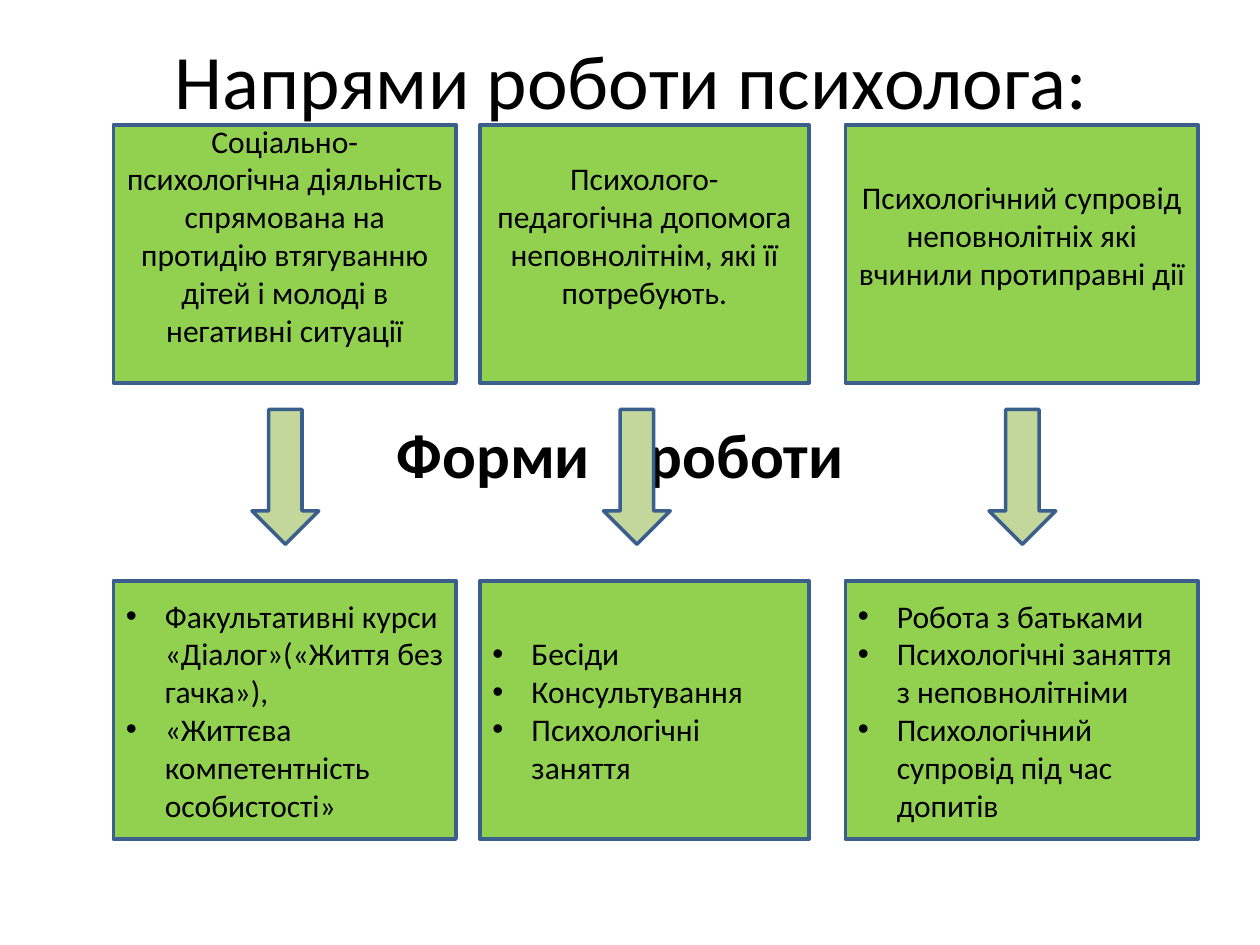
from lxml.etree import SubElement
from pptx import Presentation
from pptx.dml.color import RGBColor
from pptx.enum.shapes import MSO_SHAPE
from pptx.enum.text import MSO_ANCHOR, MSO_AUTO_SIZE, PP_ALIGN
from pptx.oxml.ns import qn
from pptx.util import Inches, Pt

BOX_H = 2.05
DIRECTIONS_Y, ARROWS_Y, FORMS_Y = 0.99, 3.25, 4.61

# left, width, arrow left, direction of work, forms of work
COLUMNS = [
    (0.9, 2.72, 2,
     "Соціально-психологічна діяльність спрямована на протидію втягуванню "
     "дітей і молоді в негативні ситуації",
     ["Факультативні курси «Діалог»(«Життя без гачка»),",
      "«Життєва компетентність особистості»"]),
    (3.81, 2.61, 4.79,
     "Психолого-педагогічна допомога неповнолітнім, які її потребують.",
     ["Бесіди", "Консультування", "Психологічні заняття"]),
    (6.71, 2.8, 7.85,
     "Психологічний супровід неповнолітніх які вчинили протиправні дії",
     ["Робота з батьками", "Психологічні заняття з неповнолітніми",
      "Психологічний супровід під час допитів"]),
]


def rgb(value):
    """Turn a hex string into a colour."""
    return RGBColor.from_string(value)


def write(p, text, size=18, bold=False, align=PP_ALIGN.CENTER):
    """Write formatted text into a paragraph."""
    p.alignment = align
    p.space_before = Pt(0)
    r = p.add_run()
    r.text = text
    r.font.name = "Calibri"
    r.font.size = Pt(size)
    r.font.bold = bold
    r.font.color.rgb = rgb("000000")


def set_bullet(p, indent=0.31):
    """Give a paragraph a round bullet with a hanging indent."""
    pPr = p._p.get_or_add_pPr()
    pPr.set("marL", str(Inches(indent)))
    pPr.set("indent", str(-Inches(indent)))
    SubElement(pPr, qn("a:buFont"), typeface="Arial")
    SubElement(pPr, qn("a:buChar"), char="•")


def set_tab(p, pos):
    """Remove the bullet of a paragraph and set one left tab stop."""
    pPr = p._p.get_or_add_pPr()
    pPr.set("marL", "0")
    pPr.set("indent", "0")
    SubElement(pPr, qn("a:buNone"))
    tabs = SubElement(pPr, qn("a:tabLst"))
    SubElement(tabs, qn("a:tab"), pos=str(Inches(pos)), algn="l")


def add_figure(s, kind, x, y, w, h, fill):
    """Add an outlined preset shape and return its text frame."""
    sp = s.shapes.add_shape(kind, Inches(x), Inches(y), Inches(w), Inches(h))
    sp.shadow.inherit = False
    sp.fill.solid()
    sp.fill.fore_color.rgb = rgb(fill)
    sp.line.color.rgb = rgb("3A5F8C")
    sp.line.width = Pt(2)
    tf = sp.text_frame
    tf.word_wrap = True
    tf.vertical_anchor = MSO_ANCHOR.MIDDLE
    return tf


def add_box(s, x, y, w):
    """Add a green box and return its text frame."""
    return add_figure(s, MSO_SHAPE.RECTANGLE, x, y, w, BOX_H, "92D050")


def add_direction(s, x, w, text):
    """Add a box with a direction of work, its text raised by one line."""
    tf = add_box(s, x, DIRECTIONS_Y, w)
    tf.margin_bottom = Inches(0.35)
    write(tf.paragraphs[0], text)


def add_forms(s, x, w, items):
    """Add a box with a bulleted list of forms of work."""
    tf = add_box(s, x, FORMS_Y, w)
    for i, item in enumerate(items):
        p = tf.add_paragraph() if i else tf.paragraphs[0]
        set_bullet(p)
        write(p, item, align=PP_ALIGN.LEFT)


def place(sp, x, y, w, h, anchor):
    """Move a placeholder and return its text frame."""
    sp.left, sp.top, sp.width, sp.height = map(Inches, (x, y, w, h))
    tf = sp.text_frame
    tf.word_wrap = True
    tf.auto_size = MSO_AUTO_SIZE.NONE
    tf.vertical_anchor = anchor
    return tf


def main():
    """Build the slide."""
    prs = Presentation()
    prs.slide_width, prs.slide_height = Inches(10), Inches(7.5)
    s = prs.slides.add_slide(prs.slide_layouts[1])

    tf = place(s.shapes.title, 0.51, 0, 9, 1.25, MSO_ANCHOR.MIDDLE)
    write(tf.paragraphs[0], "Напрями роботи психолога:", size=44)

    tf = place(s.placeholders[1], 0.55, ARROWS_Y, 9.01, 0.79, MSO_ANCHOR.TOP)
    tf.margin_left = Inches(2.6)
    p = tf.paragraphs[0]
    set_tab(p, 2.22)
    write(p, "Форми\tроботи", size=36, bold=True, align=PP_ALIGN.LEFT)

    for x, w, arrow_x, direction, forms in COLUMNS:
        add_direction(s, x, w, direction)
        add_figure(s, MSO_SHAPE.DOWN_ARROW, arrow_x, ARROWS_Y, 0.53, 1.07, "C3D69B")
        add_forms(s, x, w, forms)

    prs.save("out.pptx")


if __name__ == "__main__":
    main()
